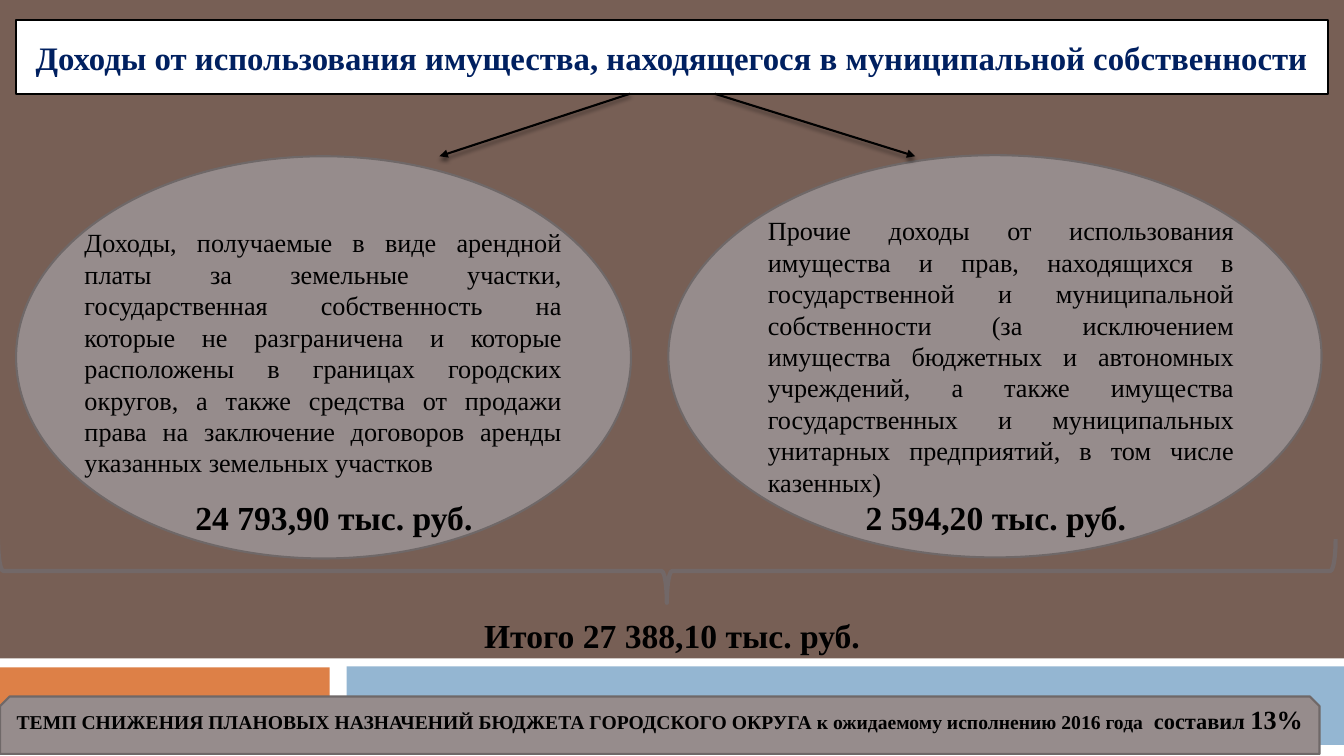
"""Build a slide on municipal property income."""
from lxml import etree
from pptx import Presentation
from pptx.dml.color import RGBColor
from pptx.enum.shapes import MSO_CONNECTOR, MSO_SHAPE
from pptx.enum.text import MSO_ANCHOR, PP_ALIGN
from pptx.oxml import parse_xml
from pptx.oxml.ns import nsdecls, qn
from pptx.util import Inches, Pt

RECT = MSO_SHAPE.RECTANGLE
OVAL = MSO_SHAPE.OVAL
SNIPPED = MSO_SHAPE.SNIP_2_SAME_RECTANGLE
BRACE = MSO_SHAPE.RIGHT_BRACE
STRAIGHT = MSO_CONNECTOR.STRAIGHT
MIDDLE, TOP = MSO_ANCHOR.MIDDLE, MSO_ANCHOR.TOP
LEFT, CENTER, JUSTIFY = PP_ALIGN.LEFT, PP_ALIGN.CENTER, PP_ALIGN.JUSTIFY

WIDTH, HEIGHT = Inches(13.333), Inches(7.5)
FONT = "Times New Roman"
COLORS = {
    "background": "775F55",
    "white": "FFFFFF",
    "orange": "DD8047",
    "blue": "94B6D2",
    "panel": "968C8C",
    "edge": "6F6868",
    "brace": "726868",
    "title": "002060",
    "black": "000000",
}
TITLE = "Доходы от использования имущества, находящегося в муниципальной собственности"
RENT = (
    "Доходы, получаемые в виде арендной платы за земельные участки, "
    "государственная собственность на которые не разграничена и которые "
    "расположены в границах городских округов, а также средства от продажи "
    "права на заключение договоров аренды указанных земельных участков"
)
OTHER = (
    "Прочие доходы от использования имущества и прав, находящихся в "
    "государственной и муниципальной собственности (за исключением имущества "
    "бюджетных и автономных учреждений, а также имущества государственных и "
    "муниципальных унитарных предприятий, в том числе казенных)"
)
RATE = [
    ("ТЕМП СНИЖЕНИЯ ПЛАНОВЫХ НАЗНАЧЕНИЙ БЮДЖЕТА ГОРОДСКОГО ОКРУГА "
     "к ожидаемому исполнению 2016 года  ", 14),
    ("составил ", 16),
    ("13%", 18.7),
]
STREAMS = [
    {"oval": (1.2, 20.67, 45.75, 53.2), "arrow": (46.88, 32.7),
     "about": RENT, "about_box": (5.55, 29.33, 36.98, 34.8),
     "amount": "24 793,90 тыс. руб.", "amount_left": 13.8},
    {"oval": (49.73, 20.53, 48.6, 53.2), "arrow": (53.18, 68.1),
     "about": OTHER, "about_box": (56.4, 27.73, 36.15, 39.07),
     "amount": "2 594,20 тыс. руб.", "amount_left": 63.68},
]


def color(name):
    """Return the named palette colour."""
    return RGBColor.from_string(COLORS[name])


def across(share):
    """Turn a percentage of the slide width into a length."""
    return round(WIDTH * share / 100)


def down(share):
    """Turn a percentage of the slide height into a length."""
    return round(HEIGHT * share / 100)


def place(box):
    """Turn left, top, width and height percentages into lengths."""
    left, top, width, height = box
    return across(left), down(top), across(width), down(height)


def add_panel(slide, kind, box, fill=None, edge=None, weight=1.5, rotation=0):
    """Add a flat preset shape."""
    panel = slide.shapes.add_shape(kind, *place(box))
    panel.shadow.inherit = False
    panel.rotation = rotation
    if fill:
        panel.fill.solid()
        panel.fill.fore_color.rgb = color(fill)
    else:
        panel.fill.background()
    if edge:
        panel.line.color.rgb = color(edge)
        panel.line.width = Pt(weight)
    else:
        panel.line.fill.background()
    return panel


def write(frame, text, size=24, bold=True, tint="black", align=LEFT, anchor=TOP):
    """Write a string, or a list of text and size pairs, as one paragraph."""
    frame.word_wrap = True
    frame.vertical_anchor = anchor
    paragraph = frame.paragraphs[0]
    paragraph.alignment = align
    pieces = [(text, size)] if isinstance(text, str) else text
    for words, points in pieces:
        run = paragraph.add_run()
        run.text = words
        run.font.name = FONT
        run.font.size = Pt(points)
        run.font.bold = bold
        run.font.color.rgb = color(tint)


def add_label(slide, box, text, **style):
    """Add a text box with formatted text."""
    write(slide.shapes.add_textbox(*place(box)).text_frame, text, **style)


def add_arrow(slide, start_x, end_x):
    """Add a shadowed arrow from the title down to an oval."""
    arrow = slide.shapes.add_connector(
        STRAIGHT, across(start_x), down(12.4), across(end_x), down(20.67))
    arrow.line.color.rgb = color("black")
    arrow.line.width = Pt(1.5)
    etree.SubElement(arrow.line._get_or_add_ln(), qn("a:tailEnd"), type="triangle")
    arrow._element.spPr.append(parse_xml(
        f'<a:effectLst {nsdecls("a")}><a:outerShdw blurRad="{Pt(3)}" '
        f'dist="{Pt(2.4)}" dir="5400000" rotWithShape="0">'
        f'<a:srgbClr val="{COLORS["black"]}"><a:alpha val="45000"/></a:srgbClr>'
        "</a:outerShdw></a:effectLst>"))


def add_title(slide):
    """Add the framed title."""
    banner = add_panel(slide, RECT, (1.2, 2.67, 97.65, 9.73), "white", "black")
    frame = banner.text_frame
    frame.margin_left = frame.margin_top = frame.margin_bottom = 0
    frame.margin_right = Inches(0.02)
    write(frame, TITLE, size=23.4, tint="title", align=CENTER, anchor=MIDDLE)


def add_stream(slide, stream):
    """Add one income stream: oval, arrow, description and amount."""
    add_panel(slide, OVAL, stream["oval"], "panel", "edge")
    add_arrow(slide, *stream["arrow"])
    add_label(slide, stream["about_box"], stream["about"],
              size=18.7, bold=False, align=JUSTIFY)
    add_label(slide, (stream["amount_left"], 65.07, 23.63, 6.8), stream["amount"])


def main():
    """Build and save the slide."""
    deck = Presentation()
    deck.slide_width, deck.slide_height = WIDTH, HEIGHT
    slide = deck.slides.add_slide(deck.slide_layouts[6])
    slide.background.fill.solid()
    slide.background.fill.fore_color.rgb = color("background")

    add_panel(slide, RECT, (0, 87.07, 100, 12.93), "white")
    add_panel(slide, RECT, (-0.08, 88.27, 24.6, 10.4), "orange")
    add_panel(slide, RECT, (25.8, 88.13, 74.2, 10.4), "blue")
    add_panel(slide, SNIPPED, (0, 92.13, 98.18, 7.6), "panel", "edge")
    add_title(slide)
    for stream in STREAMS:
        add_stream(slide, stream)
    add_panel(slide, BRACE, (47.25, -12.93, 4.73, 176.93),
              edge="brace", weight=3, rotation=90)
    add_label(slide, (0, 80.67, 100, 6.8), "Итого 27 388,10 тыс. руб.", align=CENTER)
    add_label(slide, (-1.5, 92.4, 101.18, 10.27), RATE, align=CENTER)
    deck.save("out.pptx")


if __name__ == "__main__":
    main()
